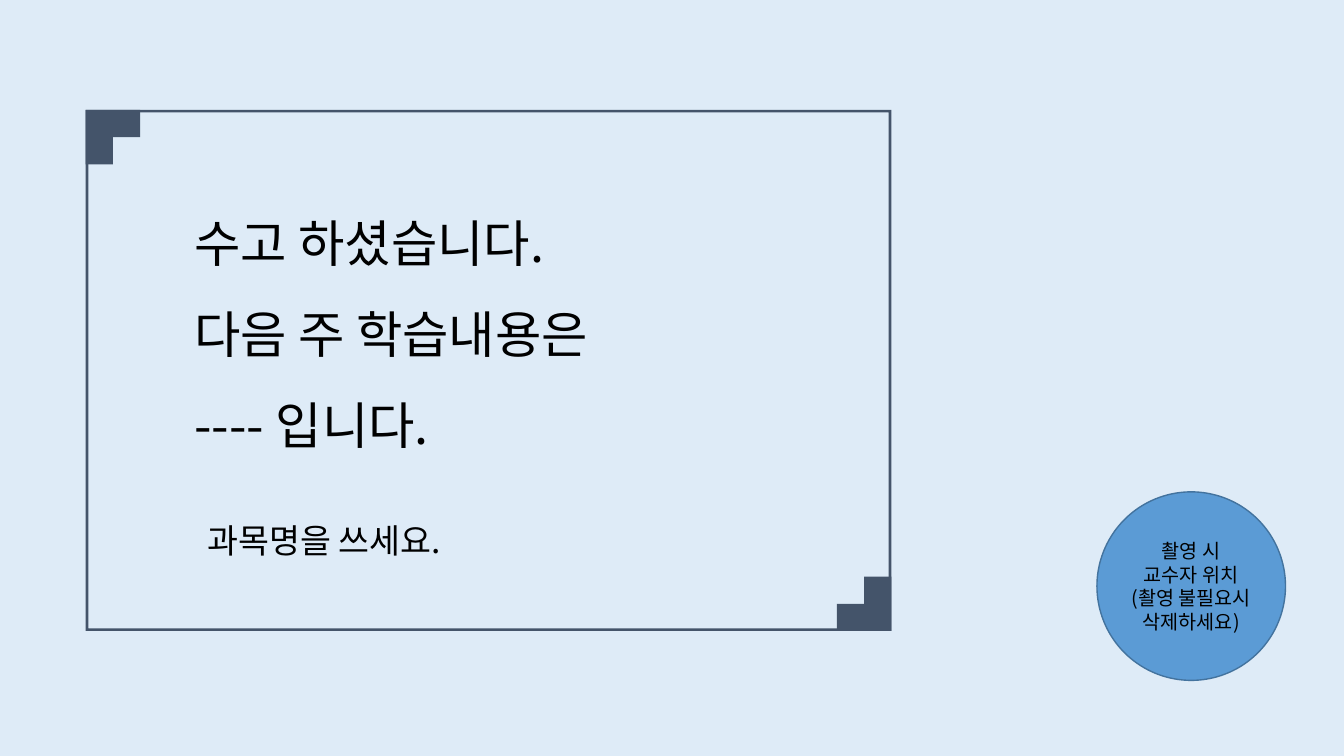
from dataclasses import dataclass

from lxml.etree import SubElement
from pptx import Presentation
from pptx.dml.color import RGBColor
from pptx.enum.shapes import MSO_SHAPE as SHAPE
from pptx.enum.text import MSO_ANCHOR as ANCHOR, PP_ALIGN as ALIGN
from pptx.oxml.ns import qn
from pptx.util import Inches, Pt

FONT = "Noto Sans CJK KR"
BLACK, NAVY, BLUE, BLUE_LINE, PALE = "000000", "44546A", "5B9BD5", "43739E", "DEEBF7"


@dataclass
class Box:
    x: float
    y: float
    w: float
    h: float


@dataclass
class Text:
    lines: list[str]
    size: float
    align: ALIGN = ALIGN.CENTER
    spacing: float = 1.0
    wrap: bool = True


def rgb(color: str) -> RGBColor:
    return RGBColor.from_string(color)


def inches(box: Box) -> list[int]:
    return [Inches(v) for v in (box.x, box.y, box.w, box.h)]


def write(sp, text: Text) -> None:
    tf = sp.text_frame
    tf.word_wrap = text.wrap
    tf.vertical_anchor = ANCHOR.MIDDLE
    tf.text = "\n".join(text.lines)
    for p in tf.paragraphs:
        p.alignment = text.align
        p.line_spacing = text.spacing
        p.font.size = Pt(text.size)
        p.font.name = FONT
        p.font.color.rgb = rgb(BLACK)
        # Korean glyphs take the East Asian typeface
        props = p._p.pPr.find(qn("a:defRPr"))
        SubElement(props, qn("a:ea")).set("typeface", FONT)


def add_shape(s, kind: SHAPE, box: Box, fill: str, rotation: float = 0):
    sp = s.shapes.add_shape(kind, *inches(box))
    sp.shadow.inherit = False
    sp.fill.solid()
    sp.fill.fore_color.rgb = rgb(fill)
    sp.line.fill.background()
    sp.rotation = rotation
    return sp


def add_text(s, box: Box, text: Text) -> None:
    write(s.shapes.add_textbox(*inches(box)), text)


def main() -> None:
    prs = Presentation()
    prs.slide_width, prs.slide_height = Inches(13.33), Inches(7.5)
    s = prs.slides.add_slide(prs.slide_layouts[6])
    s.background.fill.solid()
    s.background.fill.fore_color.rgb = rgb(PALE)

    # Course name
    add_text(s, Box(0, 5.06, 6.43, 0.64), Text(["과목명을 쓰세요."], 24, spacing=0.9))

    # Instructor position
    sp = add_shape(s, SHAPE.OVAL, Box(10.88, 4.88, 1.87, 1.87), BLUE)
    sp.line.color.rgb = rgb(BLUE_LINE)
    sp.line.width = Pt(1)
    write(sp, Text(["촬영 시", "교수자 위치", "(촬영 불필요시", "삭제하세요)"], 14, wrap=False))

    # Closing message
    message = ["수고 하셨습니다.", "다음 주 학습내용은", "---- 입니다."]
    add_text(s, Box(1.83, 2.61, 6.43, 1.09), Text(message, 36, ALIGN.LEFT, 1.5))

    # Frame with two opposite corners
    frame, side = Box(0.85, 1.09, 7.99, 5.17), 0.54
    right, bottom = frame.x + frame.w - side, frame.y + frame.h - side
    for x, y, rotation in ((frame.x, frame.y, 90), (right, bottom, 270)):
        add_shape(s, SHAPE.CORNER, Box(x, y, side, side), NAVY, rotation)
    add_shape(s, SHAPE.FRAME, frame, NAVY).adjustments[0] = 0.005

    prs.save("out.pptx")


if __name__ == "__main__":
    main()
